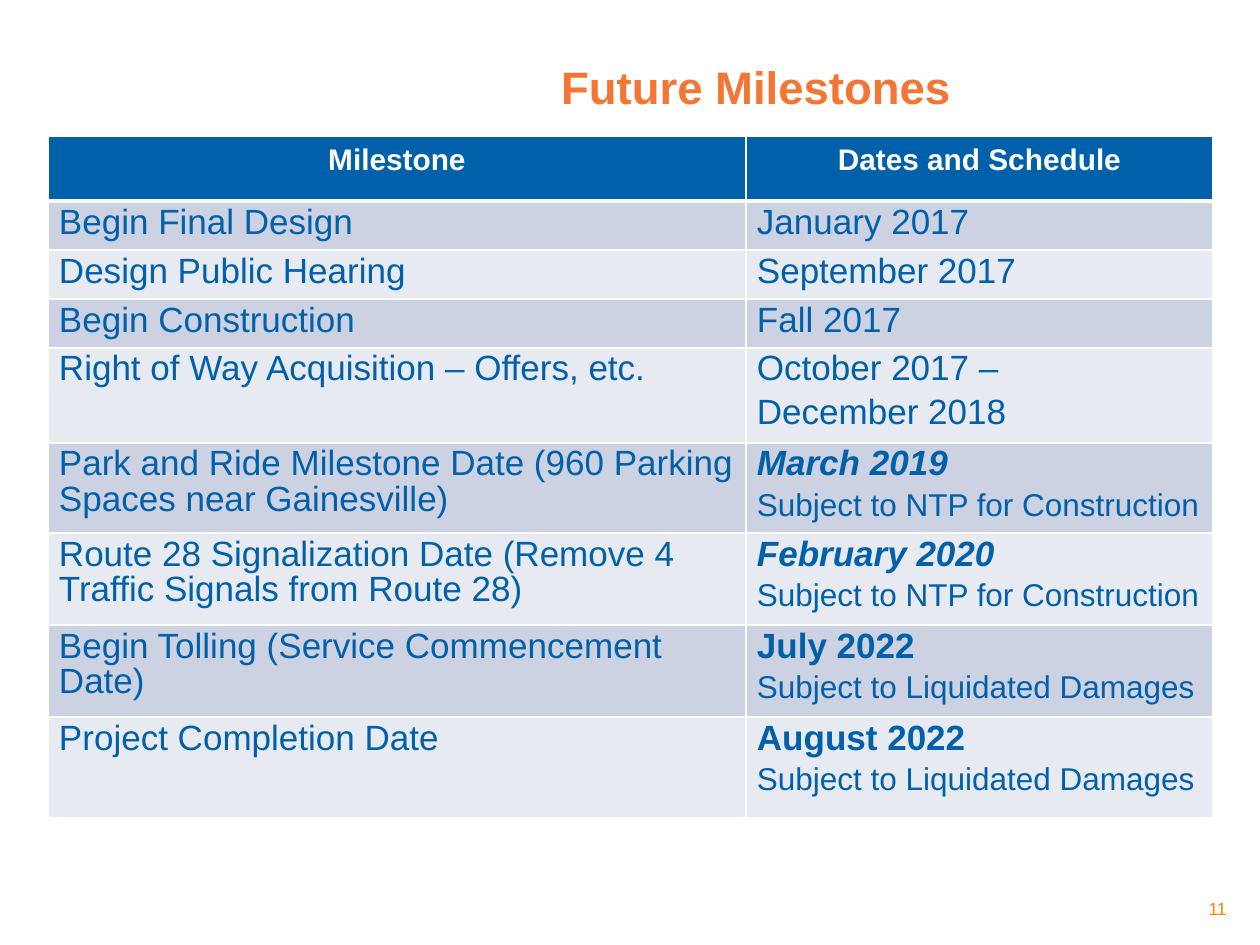
from lxml.etree import SubElement
from pptx import Presentation
from pptx.dml.color import RGBColor
from pptx.enum.text import MSO_ANCHOR, PP_ALIGN
from pptx.oxml.ns import qn
from pptx.util import Emu, Pt

PX = 914400 / 126
FONT = "Arial"
COLORS = {
    "orange": "F47635",
    "page": "FF8000",
    "blue": "0060AA",
    "white": "FFFFFF",
    "band_dark": "CCD2E2",
    "band_light": "E7EAF1",
}

# Text formats
TITLE = {"size": Pt(26), "bold": True, "color": "orange"}
PAGE = {"size": Pt(10), "color": "page"}
HEADER = {"size": Pt(17), "bold": True, "color": "white"}
BODY = {"size": Pt(20), "bold": False, "color": "blue"}
FIRM = BODY | {"bold": True}
TARGET = FIRM | {"italic": True}
NOTE = BODY | {"size": Pt(18)}

NTP = ("Subject to NTP for Construction", NOTE)
DAMAGES = ("Subject to Liquidated Damages", NOTE)

# Row height, milestone, lines of the schedule
MILESTONES = [
    (49, "Begin Final Design", [("January 2017", BODY)]),
    (49, "Design Public Hearing", [("September 2017", BODY)]),
    (49, "Begin Construction", [("Fall 2017", BODY)]),
    (95, "Right of Way Acquisition – Offers, etc.",
     [("October 2017 –", BODY), ("December 2018", BODY)]),
    (89, "Park and Ride Milestone Date (960 Parking Spaces near Gainesville)",
     [("March 2019", TARGET), NTP]),
    (92, "Route 28 Signalization Date (Remove 4 Traffic Signals from Route 28)",
     [("February 2020", TARGET), NTP]),
    (92, "Begin Tolling (Service Commencement Date)",
     [("July 2022", FIRM), DAMAGES]),
    (101, "Project Completion Date", [("August 2022", FIRM), DAMAGES]),
]
HEADINGS = ["Milestone", "Dates and Schedule"]
HEADER_HEIGHT = 65
COLUMN_WIDTHS = [698, 467]


def px(length):
    return Emu(round(length * PX))


def rgb(color):
    return RGBColor.from_string(COLORS[color])


class SlideBuilder:
    def __init__(self, slide):
        self.slide = slide

    def add_lines(self, frame, lines, align=PP_ALIGN.LEFT, spacing=1.0, gap=0):
        for index, (text, style) in enumerate(lines):
            paragraph = frame.add_paragraph() if index else frame.paragraphs[0]
            paragraph.alignment = align
            paragraph.line_spacing = spacing
            if index:
                paragraph.space_before = Pt(gap)
            run = paragraph.add_run()
            run.text = text
            run.font.name = FONT
            for name, value in style.items():
                if name == "color":
                    run.font.color.rgb = rgb(value)
                else:
                    setattr(run.font, name, value)

    def title(self, text, left, top, width, height):
        heading = self.slide.shapes.title
        bounds = {"left": left, "top": top, "width": width, "height": height}
        for name, value in bounds.items():
            setattr(heading, name, px(value))
        frame = heading.text_frame
        frame.vertical_anchor = MSO_ANCHOR.MIDDLE
        frame.margin_top, frame.margin_bottom = px(6), px(55)
        self.add_lines(frame, [(text, TITLE)], PP_ALIGN.CENTER)

    def page_number(self, text, *bounds):
        number = self.slide.shapes.add_textbox(*map(px, bounds))
        number.text_frame.word_wrap = True
        self.add_lines(number.text_frame, [(text, PAGE)], PP_ALIGN.RIGHT)

    def table(self, left, top, widths, heights):
        bounds = (left, top, sum(widths), sum(heights))
        table = self.slide.shapes.add_table(
            len(heights), len(widths), *map(px, bounds)).table
        table.horz_banding = False
        for column, width in zip(table.columns, widths):
            column.width = px(width)
        for row, height in zip(table.rows, heights):
            row.height = px(height)
        return table

    def cell(self, cell, lines, fill, top_line=1, bottom_line=1, **layout):
        insets = {"margin_left": 11, "margin_right": 11,
                  "margin_top": 5, "margin_bottom": 5}
        for name, value in insets.items():
            setattr(cell, name, px(value))
        # Borders come before the fill in the cell properties
        properties = cell._tc.get_or_add_tcPr()
        borders = {"lnL": 1, "lnR": 1, "lnT": top_line, "lnB": bottom_line}
        for side, weight in borders.items():
            line = SubElement(properties, qn(f"a:{side}"), w=str(int(Pt(weight))))
            paint = SubElement(line, qn("a:solidFill"))
            SubElement(paint, qn("a:srgbClr"), val=COLORS["white"])
        cell.fill.solid()
        cell.fill.fore_color.rgb = rgb(fill)
        self.add_lines(cell.text_frame, lines, **layout)


def main():
    deck = Presentation()
    deck.slide_width, deck.slide_height = px(1260), px(945)
    builder = SlideBuilder(deck.slides.add_slide(deck.slide_layouts[5]))

    builder.title("Future Milestones", 294, 32, 924, 157)
    builder.page_number("11", 977, 892, 262, 32)

    # Milestone table
    heights = [HEADER_HEIGHT] + [height for height, _, _ in MILESTONES]
    table = builder.table(48, 136, COLUMN_WIDTHS, heights)
    for column, heading in enumerate(HEADINGS):
        builder.cell(table.cell(0, column), [(heading, HEADER)], "blue",
                     bottom_line=3, align=PP_ALIGN.CENTER, spacing=1.07)
    for row, (_, milestone, schedule) in enumerate(MILESTONES, start=1):
        band = "band_dark" if row % 2 else "band_light"
        for column, lines in enumerate([[(milestone, BODY)], schedule]):
            builder.cell(table.cell(row, column), lines, band,
                         top_line=3 if row == 1 else 1, spacing=0.9, gap=4.8)

    deck.save("out.pptx")


if __name__ == "__main__":
    main()
